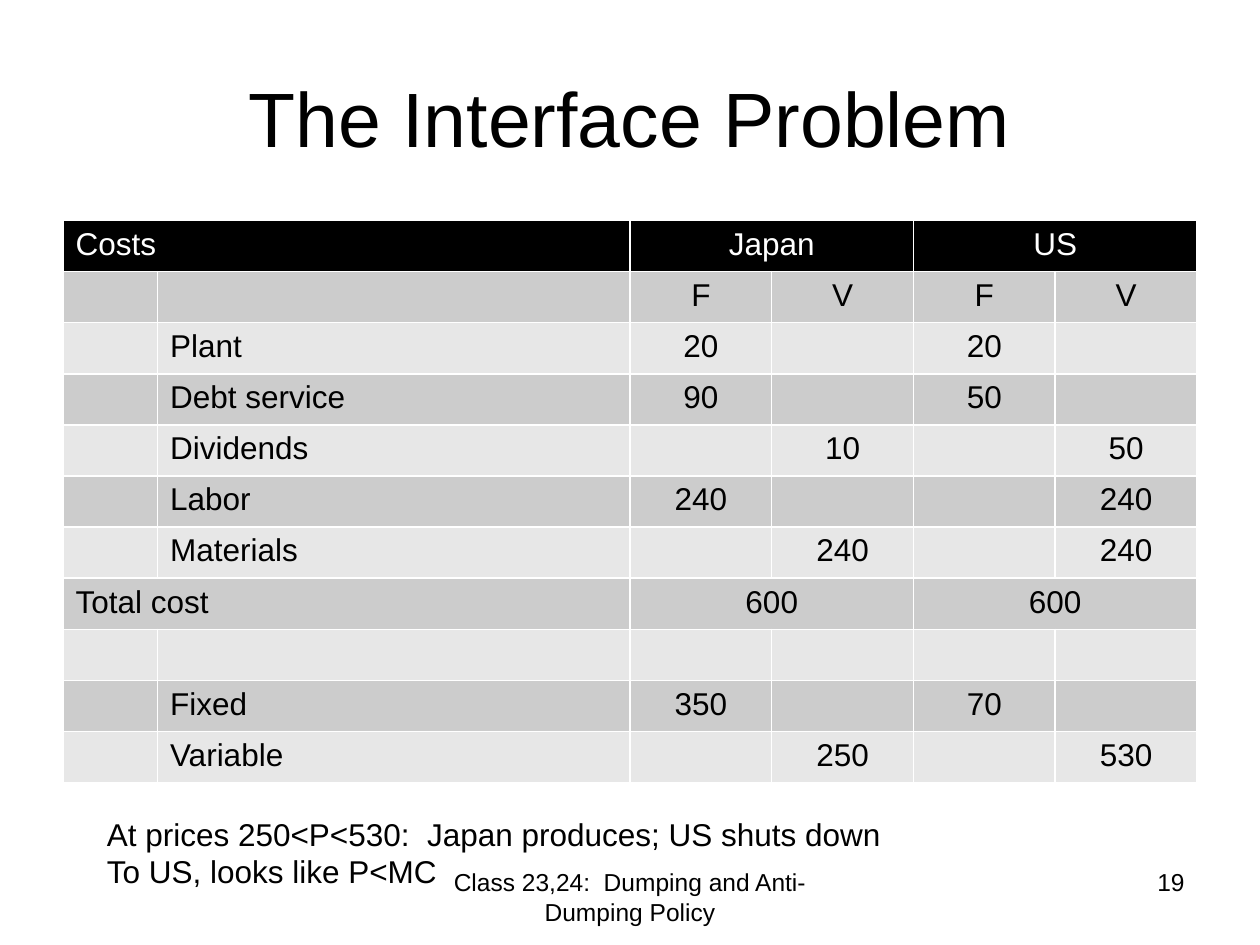
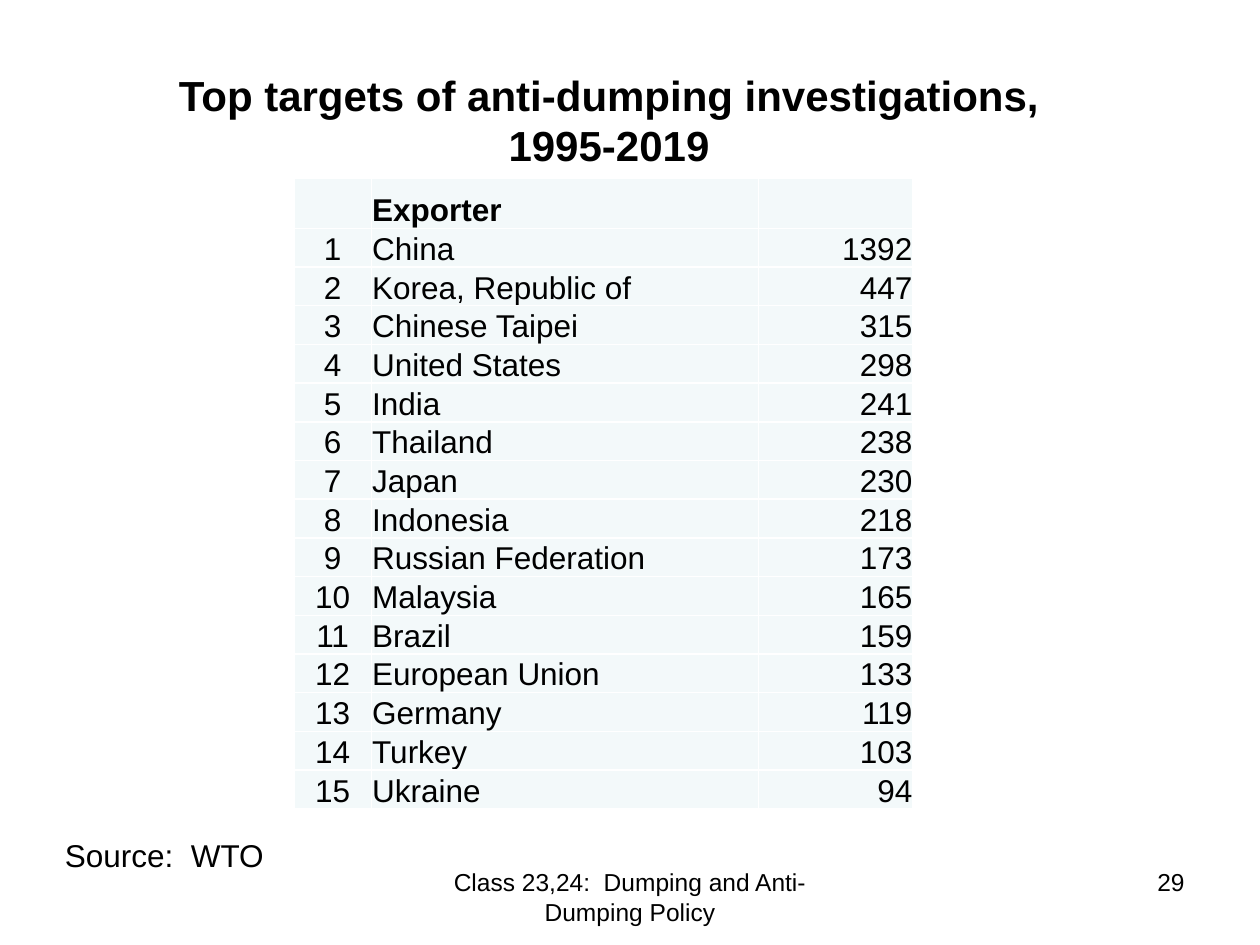
from lxml import etree
from pptx import Presentation
from pptx.dml.color import RGBColor
from pptx.enum import text as t
from pptx.oxml.ns import qn
from pptx.util import Pt

FONT = "Arial"
COLORS = {"ink": "000000", "paper": "FFFFFF", "band_dark": "CCCCCC",
          "band_light": "E7E7E7", "pale": "F3F9FA"}
LEFT, CENTER, RIGHT = t.PP_ALIGN.LEFT, t.PP_ALIGN.CENTER, t.PP_ALIGN.RIGHT
TOP, MIDDLE, BOTTOM = (t.MSO_ANCHOR.TOP, t.MSO_ANCHOR.MIDDLE,
                       t.MSO_ANCHOR.BOTTOM)

FOOTER = "Class 23,24:  Dumping and Anti-Dumping Policy"
FOOTER_BOX = (246, 492, 228, 37.5)
NUMBER_BOX = (516, 492, 168, 37.5)

COST_TITLE = "The Interface Problem"
COSTS = [
    ("Costs", "", "Japan", "", "US", ""),
    ("", "", "F", "V", "F", "V"),
    ("", "Plant", 20, "", 20, ""),
    ("", "Debt service", 90, "", 50, ""),
    ("", "Dividends", "", 10, "", 50),
    ("", "Labor", 240, "", "", 240),
    ("", "Materials", "", 240, "", 240),
    ("Total cost", "", 600, "", 600, ""),
    ("", "", "", "", "", ""),
    ("", "Fixed", 350, "", 70, ""),
    ("", "Variable", "", 250, "", 530),
]
PAIRED_ROWS = (0, 7)
CONCLUSION = ["At prices 250<P<530:  Japan produces; US shuts down",
              "To US, looks like P<MC"]

TARGET_TITLE = "Top targets of anti-dumping investigations, 1995-2019"
TARGETS = [
    ("China", 1392), ("Korea, Republic of", 447), ("Chinese Taipei", 315),
    ("United States", 298), ("India", 241), ("Thailand", 238),
    ("Japan", 230), ("Indonesia", 218), ("Russian Federation", 173),
    ("Malaysia", 165), ("Brazil", 159), ("European Union", 133),
    ("Germany", 119), ("Turkey", 103), ("Ukraine", 94),
]
SOURCE = "Source:  WTO"


def rgb(name):
    return RGBColor.from_string(COLORS[name])


def write(tf, lines, size=18, color="ink", bold=False, align=LEFT):
    lines = lines if isinstance(lines, list) else [lines]
    for i, line in enumerate(lines):
        p = tf.paragraphs[0] if i == 0 else tf.add_paragraph()
        p.alignment = align
        if line == "":
            continue
        r = p.add_run()
        r.text = str(line)
        r.font.name, r.font.size, r.font.bold = FONT, Pt(size), bold
        r.font.color.rgb = rgb(color)


def add_text(slide, box, lines, **fmt):
    tf = slide.shapes.add_textbox(*map(Pt, box)).text_frame
    tf.word_wrap = True
    write(tf, lines, **fmt)


def add_slide(prs, title, title_box, number, anchor=MIDDLE, **fmt):
    """Add a slide with its title, footer and slide number."""
    slide = prs.slides.add_slide(prs.slide_layouts[5])
    sp = slide.shapes.title
    sp.left, sp.top, sp.width, sp.height = map(Pt, title_box)
    tf = sp.text_frame
    tf.word_wrap, tf.auto_size = True, t.MSO_AUTO_SIZE.NONE
    tf.vertical_anchor = anchor
    write(tf, title, align=CENTER, **fmt)
    add_text(slide, FOOTER_BOX, FOOTER, size=14, align=CENTER)
    add_text(slide, NUMBER_BOX, number, size=14, align=RIGHT)
    return slide


def set_borders(cell, color="paper", width=1):
    tc_pr = cell._tc.get_or_add_tcPr()
    for i, side in enumerate(("lnL", "lnR", "lnT", "lnB")):
        ln = etree.Element(qn(f"a:{side}"), w=str(Pt(width)))
        fill = etree.SubElement(ln, qn("a:solidFill"))
        etree.SubElement(fill, qn("a:srgbClr"), val=COLORS[color])
        tc_pr.insert(i, ln)


def add_table(slide, origin, widths, heights, rows, style):
    """Fill a table; style(row, col) gives a cell's fill and text format."""
    size = (sum(widths), sum(heights))
    table = slide.shapes.add_table(
        len(rows), len(widths), *map(Pt, origin + size)).table
    table.first_row = table.horz_banding = False
    for col, width in zip(table.columns, widths):
        col.width = Pt(width)
    for r, (height, values) in enumerate(zip(heights, rows)):
        table.rows[r].height = Pt(height)
        for c, value in enumerate(values):
            cell = table.cell(r, c)
            fill, fmt = style(r, c)
            cell.fill.solid()
            cell.fill.fore_color.rgb = rgb(fill)
            set_borders(cell)
            write(cell.text_frame, value, **fmt)
    return table


def cost_style(row, col):
    header = row == 0
    fill = "ink" if header else "band_dark" if row % 2 else "band_light"
    return fill, {"color": "paper" if header else "ink",
                  "align": LEFT if col < 2 else CENTER}


def target_style(row, col):
    return "pale", {"bold": row == 0, "align": (CENTER, LEFT, RIGHT)[col]}


def build_costs(prs):
    slide = add_slide(prs, COST_TITLE, (36, 21.6, 648, 90), 19, size=44)
    table = add_table(slide, (36, 126), [54, 270] + [81] * 4,
                      [29.2] * len(COSTS), COSTS, cost_style)
    for row in PAIRED_ROWS:
        for col in range(0, 6, 2):
            table.cell(row, col).merge(table.cell(row, col + 1))
    add_text(slide, (54, 462, 588, 51), CONCLUSION)


def build_targets(prs):
    slide = add_slide(prs, TARGET_TITLE, (84, 36, 528, 65.5), 29,
                      anchor=TOP, size=24, bold=True)
    rows = [("", "Exporter", "")]
    rows += [(rank, *target) for rank, target in enumerate(TARGETS, 1)]
    table = add_table(slide, (168, 102), [44.2, 221.2, 88.4],
                      [28.5] + [20.9] * len(TARGETS), rows, target_style)
    for cell in table.iter_cells():
        cell.margin_left = cell.margin_right = cell.margin_top = Pt(0.5)
        cell.margin_bottom = Pt(0)
        cell.vertical_anchor = BOTTOM
    add_text(slide, (30, 474, 306, 29), SOURCE)


def main():
    prs = Presentation()
    prs.slide_width, prs.slide_height = Pt(720), Pt(540)
    build_costs(prs)
    build_targets(prs)
    prs.save("out.pptx")


if __name__ == "__main__":
    main()
